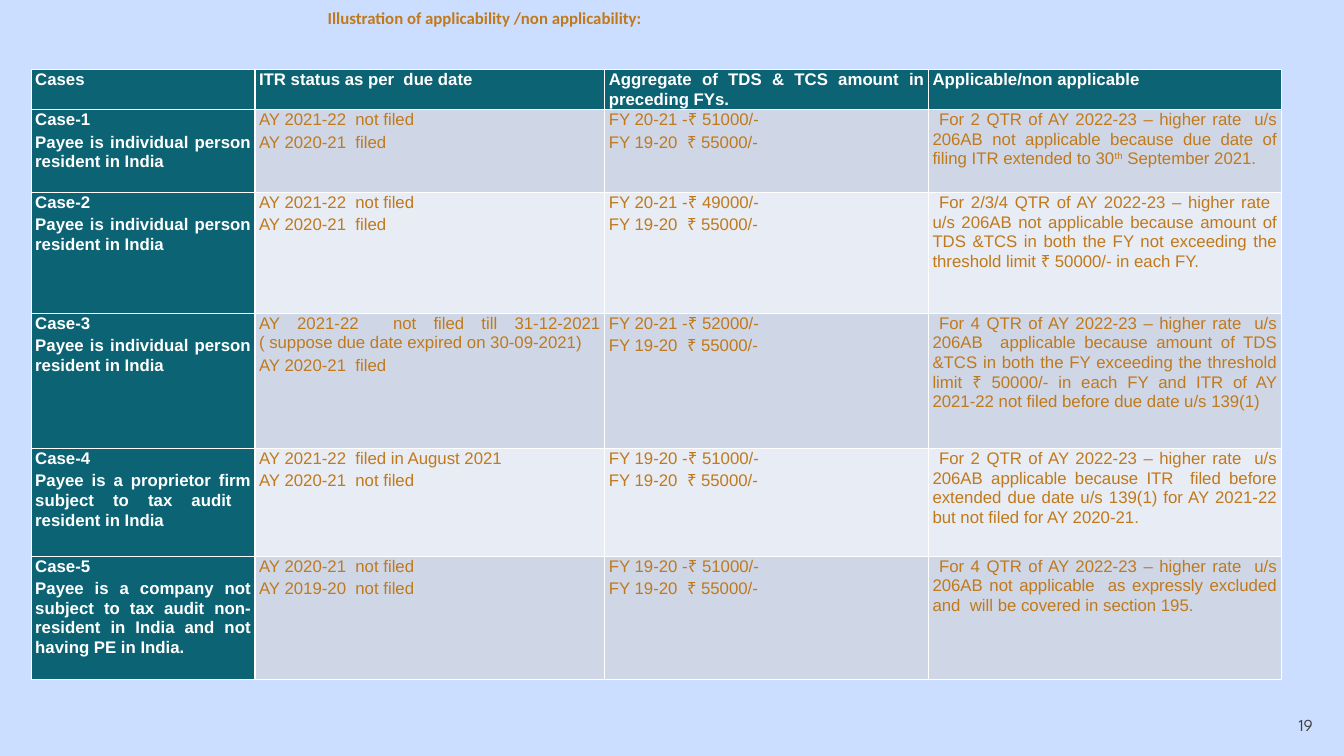
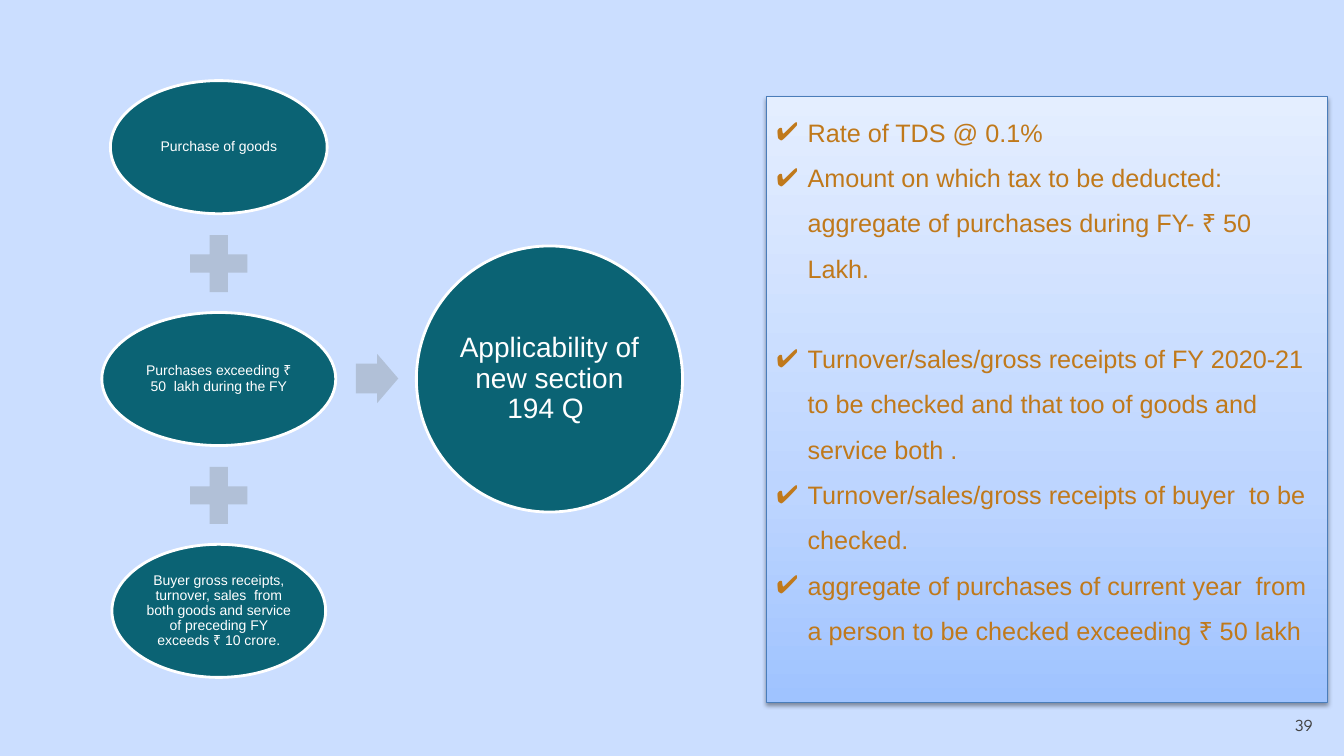
"""Build two slides on the applicability of higher TDS rates and section 194 Q."""

from pptx import Presentation
from pptx.dml.color import RGBColor
from pptx.enum.shapes import MSO_SHAPE
from pptx.enum.text import MSO_ANCHOR, MSO_AUTO_SIZE, PP_ALIGN
from pptx.oxml import parse_xml
from pptx.oxml.ns import nsdecls
from pptx.util import Inches, Pt

COLORS = {
    "background": "CBDEFF",
    "teal": "0B6374",
    "accent": "C0791B",
    "white": "FFFFFF",
    "number": "424242",
    "band_dark": "CFD7E7",
    "band_light": "E8ECF4",
    "operator": "B1C0D7",
    "panel_line": "4A7DBA",
    "panel_bottom": "9FC3FF",
    "panel_middle": "BDD5FF",
    "panel_top": "E4EEFF",
    "shadow": "000000",
}

COLUMN_WIDTHS = [2.22, 3.47, 3.21, 3.5]
ROW_HEIGHTS = [0.4, 0.82, 1.2, 1.34, 1.07, 1.22]
INDIVIDUAL = "Payee is individual person resident in India"
CASES = [
    [
        "Cases ",
        "ITR status as per  due date ",
        "Aggregate of TDS & TCS amount in preceding FYs.",
        "Applicable/non applicable",
    ],
    [
        f"Case-1\n{INDIVIDUAL}",
        "AY 2021-22  not filed\nAY 2020-21  filed",
        "FY 20-21 -₹ 51000/-\nFY 19-20  ₹ 55000/-",
        " For 2 QTR of AY 2022-23 – higher rate  u/s 206AB not applicable because "
        "due date of filing ITR extended to 30^th^ September 2021.",
    ],
    [
        f"Case-2\n{INDIVIDUAL}",
        "AY 2021-22  not filed\nAY 2020-21  filed",
        "FY 20-21 -₹ 49000/-\nFY 19-20  ₹ 55000/-",
        " For 2/3/4 QTR of AY 2022-23 – higher rate  u/s 206AB not applicable because "
        "amount of TDS &TCS in both the FY not exceeding the threshold limit "
        "₹ 50000/- in each FY.",
    ],
    [
        f"Case-3\n{INDIVIDUAL}",
        "AY 2021-22  not filed till 31-12-2021 ( suppose due date expired on "
        "30-09-2021)\nAY 2020-21  filed",
        "FY 20-21 -₹ 52000/-\nFY 19-20  ₹ 55000/-",
        " For 4 QTR of AY 2022-23 – higher rate  u/s 206AB  applicable because "
        "amount of TDS &TCS in both the FY exceeding the threshold limit ₹ 50000/- "
        "in each FY and ITR of AY 2021-22 not filed before due date u/s 139(1)",
    ],
    [
        "Case-4\nPayee is a proprietor firm subject to tax audit  resident in India",
        "AY 2021-22  filed in August 2021 \nAY 2020-21  not filed",
        "FY 19-20 -₹ 51000/-\nFY 19-20  ₹ 55000/-",
        " For 2 QTR of AY 2022-23 – higher rate  u/s 206AB applicable because ITR  "
        "filed before extended due date u/s 139(1) for AY 2021-22 but not filed for "
        "AY 2020-21. ",
    ],
    [
        "Case-5\nPayee is a company not subject to tax audit non-resident in India "
        "and not having PE in India.",
        "AY 2020-21  not filed \nAY 2019-20  not filed",
        "FY 19-20 -₹ 51000/-\nFY 19-20  ₹ 55000/-",
        " For 4 QTR of AY 2022-23 – higher rate  u/s 206AB not applicable  as "
        "expressly excluded and  will be covered in section 195. ",
    ],
]

CONDITIONS = [
    ("Purchase of goods", 2.15),
    ("Purchases exceeding ₹ 50  lakh during the FY", 2.32),
    (
        "Buyer gross receipts, turnover, sales  from both goods and service of "
        "preceding FY exceeds ₹ 10 crore.",
        2.12,
    ),
]
CONDITION_CENTER = 2.17
CONDITION_PITCH = 2.3

RULES = [
    "Rate of TDS @ 0.1%",
    "Amount on which tax to be deducted: aggregate of purchases during FY- ₹ 50 Lakh.",
    "Turnover/sales/gross receipts of FY 2020-21 to be checked and that too of goods "
    "and service both .",
    "Turnover/sales/gross receipts of buyer  to be checked.",
    "aggregate of purchases of current year  from a person to be checked exceeding "
    "₹ 50 lakh",
]
SECOND_GROUP_START = 2


def rgb(name):
    """Return the named colour."""
    return RGBColor.from_string(COLORS[name])


def place(shape, left, top, width, height):
    """Move and size a shape, in inches."""
    shape.left, shape.top = Inches(left), Inches(top)
    shape.width, shape.height = Inches(width), Inches(height)


def set_margins(target, horizontal, vertical):
    """Set the inner margins of a text frame or cell, in inches."""
    target.margin_left = target.margin_right = Inches(horizontal)
    target.margin_top = target.margin_bottom = Inches(vertical)


def format_paragraph(paragraph, size, color, font="Arial", bold=False,
                     align=PP_ALIGN.LEFT, spacing=1.0, before=0):
    """Format a paragraph and all its runs."""
    paragraph.alignment = align
    paragraph.line_spacing = spacing
    paragraph.space_before = Pt(before)
    for run in paragraph.runs:
        run.font.name = font
        run.font.size = Pt(size)
        run.font.bold = bold
        run.font.color.rgb = rgb(color)


def set_title(slide, text):
    """Fill the title placeholder."""
    title = slide.shapes.title
    place(title, 3.15, 0.03, 10, 0.3)
    frame = title.text_frame
    frame.text = text
    frame.auto_size = MSO_AUTO_SIZE.NONE
    frame.vertical_anchor = MSO_ANCHOR.MIDDLE
    set_margins(frame, 0.1, 0)
    format_paragraph(frame.paragraphs[0], 12, "accent", "Calibri", True)


def add_page_number(slide, number):
    """Add the page number in the bottom right corner."""
    box = slide.shapes.add_textbox(Inches(12.32), Inches(6.91), Inches(0.8), Inches(0.57))
    frame = box.text_frame
    frame.word_wrap = True
    frame.vertical_anchor = MSO_ANCHOR.MIDDLE
    frame.text = str(number)
    format_paragraph(frame.paragraphs[0], 12, "number", "League Spartan",
                     align=PP_ALIGN.RIGHT)


def fill_cell(cell, text, fill, color, bold):
    """Fill a table cell, raising text between carets."""
    cell.fill.solid()
    cell.fill.fore_color.rgb = rgb(fill)
    set_margins(cell, 0.04, 0)
    cell.text_frame.text = text.replace("^", "")
    for index, line in enumerate(text.split("\n")):
        paragraph = cell.text_frame.paragraphs[index]
        pieces = line.split("^")
        paragraph.runs[0].text = pieces[0]
        for position, piece in enumerate(pieces[1:], 1):
            run = paragraph.add_run()
            run.text = piece
            if position % 2:
                run.font._element.set("baseline", "30000")
        format_paragraph(paragraph, 12, color, bold=bold, align=PP_ALIGN.JUSTIFY,
                         spacing=1.04, before=2.1 if index else 0)


def add_case_table(slide):
    """Add the table of cases with a header row and header column."""
    frame = slide.shapes.add_table(
        len(ROW_HEIGHTS), len(COLUMN_WIDTHS), Inches(0.31), Inches(0.69),
        Inches(sum(COLUMN_WIDTHS)), Inches(sum(ROW_HEIGHTS)))
    table = frame.table
    for column, width in zip(table.columns, COLUMN_WIDTHS):
        column.width = Inches(width)
    for row_index, (row, height) in enumerate(zip(table.rows, ROW_HEIGHTS)):
        row.height = Inches(height)
        band = "band_dark" if row_index % 2 else "band_light"
        for column_index, cell in enumerate(row.cells):
            heading = row_index == 0 or column_index == 0
            fill_cell(cell, CASES[row_index][column_index],
                      "teal" if heading else band,
                      "white" if heading else "accent", heading)


def add_plain_shape(slide, kind, left, top, width, height, fill):
    """Add a filled shape without outline or shadow."""
    shape = slide.shapes.add_shape(
        kind, Inches(left), Inches(top), Inches(width), Inches(height))
    shape.shadow.inherit = False
    shape.fill.solid()
    shape.fill.fore_color.rgb = rgb(fill)
    shape.line.fill.background()
    return shape


def add_oval(slide, text, left, top, width, height, size, margin):
    """Add a white-edged oval with centred text."""
    oval = add_plain_shape(slide, MSO_SHAPE.OVAL, left, top, width, height, "teal")
    oval.line.color.rgb = rgb("white")
    oval.line.width = Pt(2)
    frame = oval.text_frame
    frame.text = text
    frame.word_wrap = True
    frame.vertical_anchor = MSO_ANCHOR.MIDDLE
    set_margins(frame, margin, margin)
    format_paragraph(frame.paragraphs[0], size, "white", align=PP_ALIGN.CENTER,
                     spacing=0.9)


def add_condition_diagram(slide):
    """Add the three conditions that sum up to the section's applicability."""
    for index, (text, width) in enumerate(CONDITIONS):
        offset = index * CONDITION_PITCH
        if index:
            plus = add_plain_shape(slide, MSO_SHAPE.MATH_PLUS, CONDITION_CENTER - 0.385,
                                   offset - 0.07, 0.77, 0.77, "operator")
            plus.adjustments[0] = 0.235
        add_oval(slide, text, CONDITION_CENTER - width / 2, 0.8 + offset, width, 1.32,
                 10, 0.01)
    arrow = add_plain_shape(slide, MSO_SHAPE.RIGHT_ARROW, 3.53, 3.51, 0.42, 0.49,
                            "operator")
    arrow.adjustments[0] = 0.6
    add_oval(slide, "Applicability of new section 194 Q ", 4.13, 2.44, 2.64, 2.64,
             20, 0.03)


def style_panel(panel):
    """Give the panel its gradient, outline and shadow."""
    stops = [(0, "panel_bottom"), (35, "panel_middle"), (100, "panel_top")]
    stop_xml = "".join(
        f'<a:gs pos="{position * 1000}"><a:srgbClr val="{COLORS[name]}"/></a:gs>'
        for position, name in stops)
    properties = panel.element.spPr
    properties.append(parse_xml(
        f'<a:gradFill {nsdecls("a")} rotWithShape="1"><a:gsLst>{stop_xml}</a:gsLst>'
        '<a:lin ang="16200000" scaled="0"/></a:gradFill>'))
    panel.line.color.rgb = rgb("panel_line")
    panel.line.width = Pt(0.75)
    properties.append(parse_xml(
        f'<a:effectLst {nsdecls("a")}><a:outerShdw blurRad="{Pt(3.1)}" '
        f'dist="{Pt(1.6)}" dir="5400000" rotWithShape="0">'
        f'<a:srgbClr val="{COLORS["shadow"]}"><a:alpha val="38000"/></a:srgbClr>'
        '</a:outerShdw></a:effectLst>'))


def add_check_bullet(paragraph):
    """Give a paragraph a hanging check mark."""
    properties = paragraph._p.get_or_add_pPr()
    properties.set("marL", str(Inches(0.31)))
    properties.set("indent", str(-Inches(0.31)))
    properties.append(parse_xml(
        f'<a:buClr {nsdecls("a")}><a:srgbClr val="{COLORS["accent"]}"/></a:buClr>'))
    properties.append(parse_xml(f'<a:buChar {nsdecls("a")} char="✔"/>'))


def fill_rule_panel(panel):
    """Turn the body placeholder into the panel of rules."""
    place(panel, 7.6, 0.96, 5.57, 6.01)
    style_panel(panel)
    frame = panel.text_frame
    frame.text = "\n".join(RULES)
    frame.auto_size = MSO_AUTO_SIZE.NONE
    set_margins(frame, 0.1, 0.05)
    for index, paragraph in enumerate(frame.paragraphs):
        format_paragraph(paragraph, 18, "accent", spacing=1.5,
                         before=32 if index == SECOND_GROUP_START else 0)
        add_check_bullet(paragraph)


def main():
    """Build and save the presentation."""
    presentation = Presentation()
    presentation.slide_width, presentation.slide_height = Inches(13.33), Inches(7.5)
    background = presentation.slide_master.background.fill
    background.solid()
    background.fore_color.rgb = rgb("background")

    case_slide = presentation.slides.add_slide(presentation.slide_layouts[5])
    set_title(case_slide, "Illustration of applicability /non applicability:")
    add_case_table(case_slide)
    add_page_number(case_slide, 19)

    section_slide = presentation.slides.add_slide(presentation.slide_layouts[1])
    title = section_slide.shapes.title.element
    title.getparent().remove(title)
    add_condition_diagram(section_slide)
    fill_rule_panel(section_slide.placeholders[1])
    add_page_number(section_slide, 39)
    presentation.save("out.pptx")


if __name__ == "__main__":
    main()
